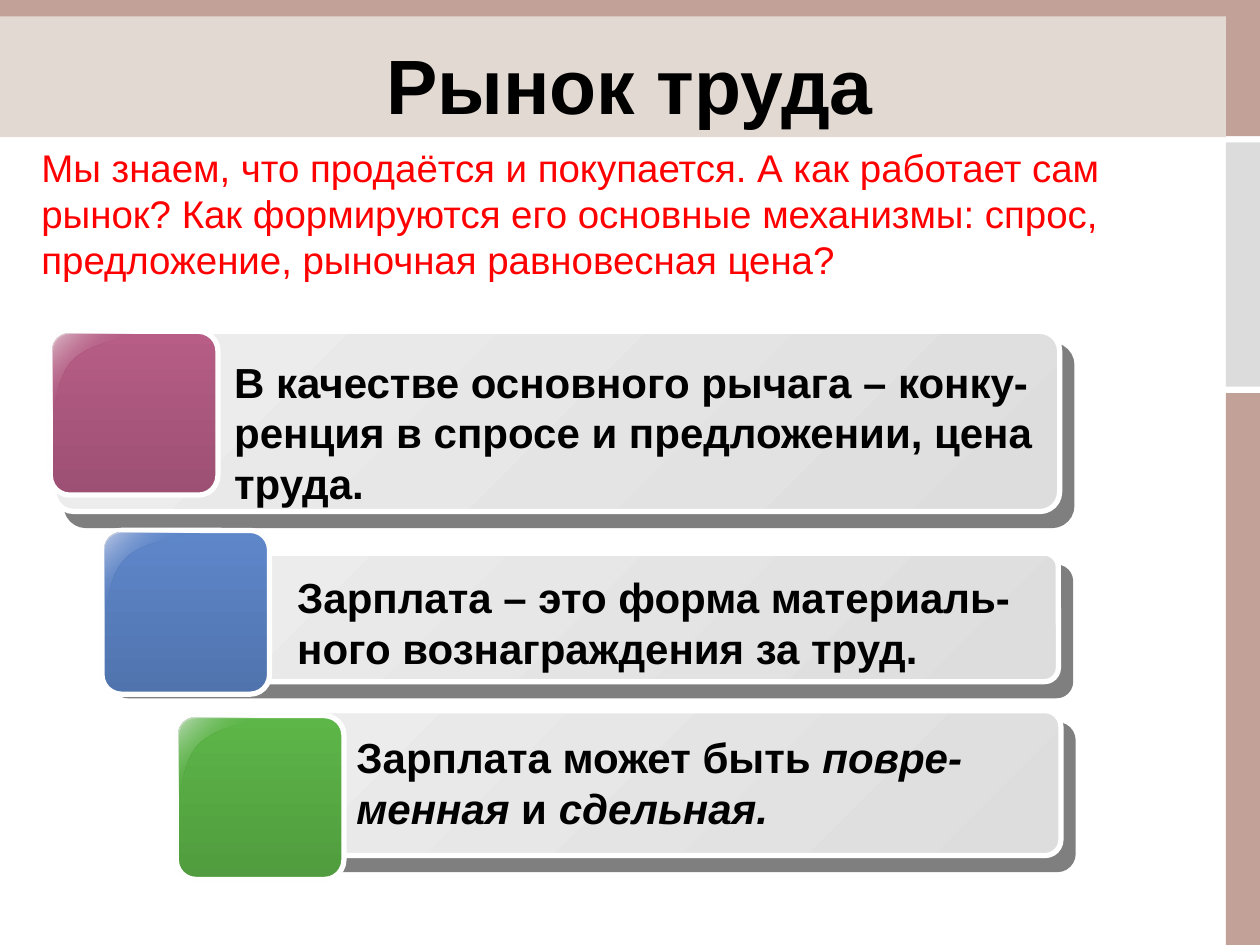
from dataclasses import dataclass

from lxml.etree import SubElement
from pptx import Presentation
from pptx.dml.color import RGBColor
from pptx.enum.shapes import MSO_SHAPE
from pptx.enum.text import MSO_ANCHOR, MSO_AUTO_SIZE, PP_ALIGN
from pptx.oxml import parse_xml
from pptx.oxml.ns import nsdecls, qn
from pptx.util import Inches, Pt


@dataclass(frozen=True)
class Theme:
    font: str = "Arial"
    text: str = "000000"
    intro: str = "FF0000"
    band: str = "C2A298"
    header: str = "E3D9D3"
    side: str = "DCDCDC"
    card: tuple = ("EEEEEE", "DDDDDD")
    card_edge: str = "FFFFFF"
    tile_edge: str = "FEFEFE"
    title_size: int = 44
    card_size: int = 24
    intro_size: int = 22


THEME = Theme()
TILE_SIZE = (1.33, 1.3)
HIGHLIGHT_OFFSET = 0.02

# Glossy corner: start point, then line ends (1 point) and curves (3 points)
HIGHLIGHT_START = (0.13, 0)
HIGHLIGHT_SEGMENTS = [
    [(0.06, 0), (0, 0.06), (0, 0.13)],
    [(0, 0.64)],
    [(0.03, 0.65), (0.01, 0.34), (0.18, 0.19)],
    [(0.34, 0.05), (0.66, 0.04), (0.65, 0)],
]

BANDS = [
    ((9.73, 1.13, 0.27, 1.94), THEME.side),
    ((9.73, 3.12, 0.27, 4.38), THEME.band),
    ((0, 0, 10, 1.08), THEME.band),
    ((0, 0.13, 9.73, 0.96), THEME.header),
]

# Each row: card box, tile corner, tile colours, highlight colour, text box, runs
ROWS = [
    ((0.43, 2.63, 7.98, 1.43), (0.4, 2.63), ("B75D86", "9D5073"), "DCBEC9",
     (1.76, 2.78, 6.61, 1.31),
     [("В качестве основного рычага – конку-ренция в спросе и предложении, "
       "цена труда.", False)]),
    ((0.81, 4.39, 7.59, 1.02), (0.81, 4.21), ("5E87CA", "5073AD"), "BEC9E4",
     (2.26, 4.49, 6.11, 0.91),
     [("Зарплата – это форма материаль-ного вознаграждения за труд.", False)]),
    ((1.5, 5.64, 6.92, 1.15), (1.4, 5.68), ("5DB648", "509C3E"), "BEDBBA",
     (2.73, 5.76, 5.52, 0.91),
     [("Зарплата может быть ", False), ("повре-менная", True),
      (" и ", False), ("сдельная.", True)]),
]

INTRO = ("Мы знаем, что продаётся и покупается. А как работает сам рынок? "
         "Как формируются его основные механизмы: спрос, предложение, "
         "рыночная равновесная цена?")


def inches(values):
    return [Inches(value) for value in values]


def format_run(run, size, color, **styles):
    values = {"name": THEME.font, "size": Pt(size), **styles}
    for attribute, value in values.items():
        setattr(run.font, attribute, value)
    run.font.color.rgb = RGBColor.from_string(color)


def set_gradient(shape, stops, angle):
    """Fill with (position, colour, opacity) stops along a clockwise angle."""
    shape.fill.background()
    gradient = parse_xml(f'<a:gradFill {nsdecls("a")} rotWithShape="1"/>')
    stop_list = SubElement(gradient, qn("a:gsLst"))
    for position, color, opacity in stops:
        stop = SubElement(stop_list, qn("a:gs"), pos=str(position * 1000))
        color_element = SubElement(stop, qn("a:srgbClr"), val=color)
        if opacity < 100:
            SubElement(color_element, qn("a:alpha"), val=str(opacity * 1000))
    SubElement(gradient, qn("a:lin"), ang=str(angle * 60000), scaled="0")
    properties = shape._element.spPr
    properties.replace(properties.find(qn("a:noFill")), gradient)


def set_shadow(shape):
    shape.shadow.inherit = False
    effects = shape._element.spPr.find(qn("a:effectLst"))
    shadow = SubElement(effects, qn("a:outerShdw"), blurRad="0",
                        dist=str(Pt(10.6)), dir=str(49 * 60000),
                        algn="ctr", rotWithShape="0")
    color = SubElement(shadow, qn("a:srgbClr"), val="000000")
    SubElement(color, qn("a:alpha"), val="50000")


def add_band(slide, box, color):
    shape = slide.shapes.add_shape(MSO_SHAPE.RECTANGLE, *inches(box))
    shape.shadow.inherit = False
    shape.fill.solid()
    shape.fill.fore_color.rgb = RGBColor.from_string(color)
    shape.line.fill.background()


def add_rounded(slide, box, corner, colors, angle, edge):
    shape = slide.shapes.add_shape(MSO_SHAPE.ROUNDED_RECTANGLE, *inches(box))
    shape.adjustments[0] = corner
    shape.shadow.inherit = False
    set_gradient(shape, [(0, colors[0], 100), (100, colors[1], 100)], angle)
    shape.line.color.rgb = RGBColor.from_string(edge)
    shape.line.width = Pt(3)
    return shape


def curve_points(start, first, second, end, steps=12):
    for step in range(1, steps + 1):
        t = step / steps
        weights = ((1 - t) ** 3, 3 * t * (1 - t) ** 2, 3 * t * t * (1 - t), t ** 3)
        yield tuple(sum(weight * value for weight, value in zip(weights, axis))
                    for axis in zip(start, first, second, end))


def add_highlight(slide, left, top, glow, base):
    points = [HIGHLIGHT_START]
    for segment in HIGHLIGHT_SEGMENTS:
        points += segment if len(segment) == 1 else curve_points(points[-1], *segment)
    vertices = [inches((left + x, top + y)) for x, y in points]
    builder = slide.shapes.build_freeform(*vertices[0])
    builder.add_line_segments(vertices[1:], close=True)
    shape = builder.convert_to_shape()
    shape.shadow.inherit = False
    set_gradient(shape, [(0, glow, 100), (50, base, 0), (100, glow, 100)], 45)
    shape.line.fill.background()


def add_text(slide, box, runs, size, color, bold):
    frame = slide.shapes.add_textbox(*inches(box)).text_frame
    frame.word_wrap = True
    frame.auto_size = MSO_AUTO_SIZE.SHAPE_TO_FIT_TEXT
    for text, italic in runs:
        run = frame.paragraphs[0].add_run()
        run.text = text
        format_run(run, size, color, bold=bold, italic=italic)


def add_row(slide, card, tile, colors, glow, text_box, runs):
    set_shadow(add_rounded(slide, card, 0.109, THEME.card, 45, THEME.card_edge))
    add_rounded(slide, (*tile, *TILE_SIZE), 0.119, colors, 90, THEME.tile_edge)
    left, top = (value + HIGHLIGHT_OFFSET for value in tile)
    add_highlight(slide, left, top, glow, colors[0])
    add_text(slide, text_box, runs, THEME.card_size, THEME.text, True)


def set_title(slide, text):
    title = slide.shapes.title
    title.left, title.top, title.width, title.height = inches((0.5, 0.23, 9, 0.87))
    frame = title.text_frame
    frame.vertical_anchor = MSO_ANCHOR.MIDDLE
    paragraph = frame.paragraphs[0]
    paragraph.alignment = PP_ALIGN.CENTER
    run = paragraph.add_run()
    run.text = text
    format_run(run, THEME.title_size, THEME.text, bold=True)
    # Bring the title in front of the bands
    slide.shapes._spTree.append(title._element)


def main():
    presentation = Presentation()
    presentation.slide_width, presentation.slide_height = inches((10, 7.5))
    slide = presentation.slides.add_slide(presentation.slide_layouts[5])

    # Background bands and title
    for box, color in BANDS:
        add_band(slide, box, color)
    set_title(slide, "Рынок труда")

    # Cards with glossy tiles
    for row in ROWS:
        add_row(slide, *row)

    # Introduction
    add_text(slide, (0.23, 1.09, 9.45, 1.21), [(INTRO, False)],
             THEME.intro_size, THEME.intro, False)
    presentation.save("out.pptx")


if __name__ == "__main__":
    main()
